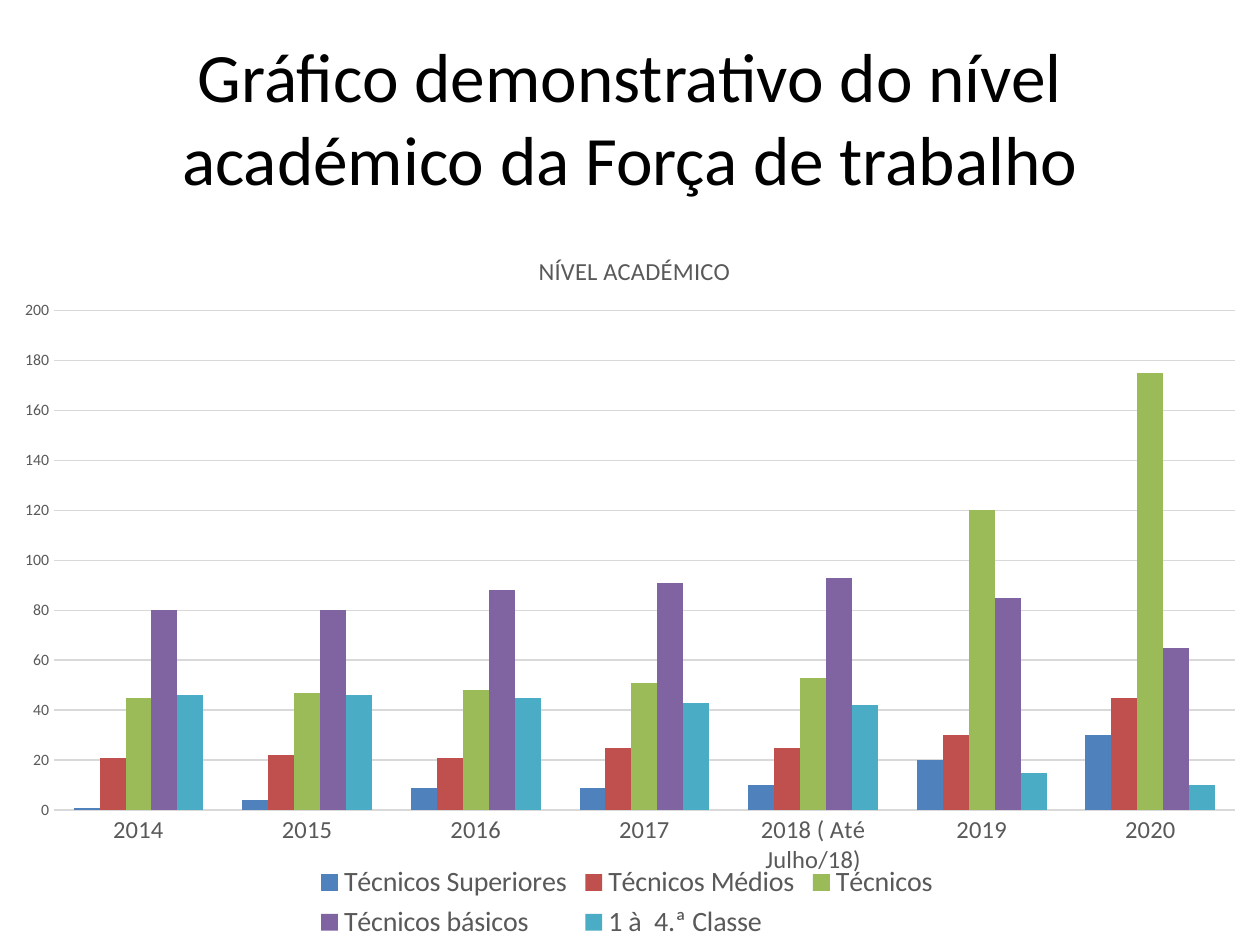
from typing import NamedTuple

from lxml import etree
from pptx import Presentation
from pptx import util as u
from pptx.chart.data import CategoryChartData
from pptx.dml.color import RGBColor
from pptx.enum import chart as ch, text
from pptx.oxml.ns import qn

FONT = "Calibri"
GREY = "595959"


class Level(NamedTuple):
    name: str
    colour: str
    counts: tuple[int, ...]


YEARS = ("2014", "2015", "2016", "2017", "2018 ( Até Julho/18)", "2019", "2020")
LEVELS = (
    Level("Técnicos Superiores", "4F81BD", (1, 4, 9, 9, 10, 20, 30)),
    Level("Técnicos Médios", "C0504D", (21, 22, 21, 25, 25, 30, 45)),
    Level("Técnicos ", "9BBB59", (45, 47, 48, 51, 53, 120, 175)),
    Level("Técnicos básicos", "8064A2", (80, 80, 88, 91, 93, 85, 65)),
    Level("1 à  4.ª Classe", "4BACC6", (46, 46, 45, 43, 42, 15, 10)),
)


def rgb(colour: str) -> RGBColor:
    return RGBColor.from_string(colour)


def style(font, size: float, colour: str = GREY) -> None:
    font.name, font.size, font.bold = FONT, u.Pt(size), False
    font.color.rgb = rgb(colour)


def set_layout(parent, index: int, **shares: float) -> None:
    """Place a chart part by shares of the chart's size."""
    for old in parent.findall(qn("c:layout")):
        parent.remove(old)
    layout = etree.Element(qn("c:layout"))
    manual = etree.SubElement(layout, qn("c:manualLayout"))
    settings = {"xMode": "edge", "yMode": "edge", **shares}
    if "w" in shares:
        settings = {"layoutTarget": "inner", **settings}
    for tag, value in settings.items():
        etree.SubElement(manual, qn(f"c:{tag}")).set("val", str(value))
    parent.insert(index, layout)


def add_heading(page, width: int, height: int) -> None:
    box = page.shapes.add_textbox(
        int(width * 0.05), int(height * 0.04), int(width * 0.9), int(height / 6))
    frame = box.text_frame
    frame.word_wrap = True
    frame.vertical_anchor = text.MSO_ANCHOR.MIDDLE
    para = frame.paragraphs[0]
    para.text = "Gráfico demonstrativo do nível académico da Força de trabalho"
    para.alignment = text.PP_ALIGN.CENTER
    style(para.font, 39.6, "000000")


def style_axes(chart) -> None:
    for axis, size in ((chart.category_axis, 14), (chart.value_axis, 9)):
        axis.major_tick_mark = axis.minor_tick_mark = ch.XL_TICK_MARK.NONE
        axis.format.line.fill.background()
        style(axis.tick_labels.font, size)
    values = chart.value_axis
    values.minimum_scale, values.maximum_scale, values.major_unit = 0, 200, 20
    values.tick_labels.number_format = "#,##0"
    values.tick_labels.number_format_is_linked = False
    values.has_major_gridlines = True
    grid = values.major_gridlines.format.line
    grid.color.rgb, grid.width = rgb("D9D9D9"), u.Pt(0.75)


def add_level_chart(page, width: int, height: int) -> None:
    data = CategoryChartData()
    data.categories = YEARS
    for level in LEVELS:
        data.add_series(level.name, level.counts)
    top = int(height * 7 / 30)
    chart = page.shapes.add_chart(
        ch.XL_CHART_TYPE.COLUMN_CLUSTERED, 0, top, width, height - top, data).chart
    style(chart.font, 10, "000000")

    chart.has_title = True
    para = chart.chart_title.text_frame.paragraphs[0]
    para.text = "NÍVEL ACADÉMICO"
    style(para.font, 14)
    chart.chart_title.include_in_layout = False

    chart.has_legend = True
    chart.legend.position = ch.XL_LEGEND_POSITION.BOTTOM
    chart.legend.include_in_layout = False
    style(chart.legend.font, 16)

    style_axes(chart)
    plot = chart.plots[0]
    plot.gap_width, plot.overlap, plot.vary_by_categories = 150, 0, False
    for series, level in zip(plot.series, LEVELS):
        series.format.fill.solid()
        series.format.fill.fore_color.rgb = rgb(level.colour)

    root = chart.element if hasattr(chart, "element") else chart._chartSpace
    set_layout(root.find(".//" + qn("c:plotArea")), 0, x=0.043, y=0.124, w=0.937, h=0.69)
    set_layout(root.find(".//" + qn("c:title")), 1, x=0.424, y=0.04)


def main() -> None:
    deck = Presentation()
    deck.slide_width, deck.slide_height = u.Inches(10), u.Inches(7.5)
    page = deck.slides.add_slide(deck.slide_layouts[6])
    add_heading(page, deck.slide_width, deck.slide_height)
    add_level_chart(page, deck.slide_width, deck.slide_height)
    deck.save("out.pptx")


if __name__ == "__main__":
    main()
